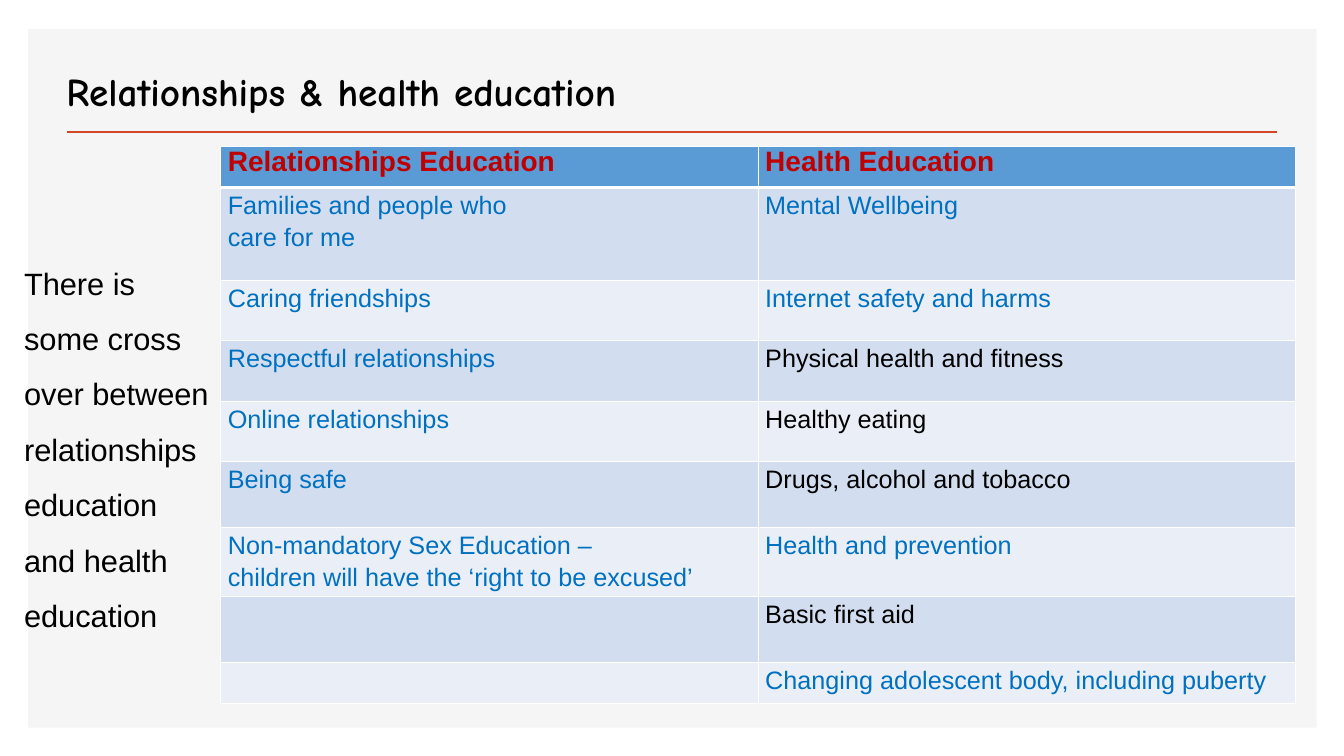
"""Build the slide on relationships and health education."""
from lxml import etree
from pptx import Presentation
from pptx import util as u
from pptx.dml.color import RGBColor
from pptx.enum import shapes, text
from pptx.oxml import ns

HUES = {
    "panel": "F5F5F5", "rule": "D24726", "black": "000000", "blue": "0070C0",
    "red": "C00000", "head": "5B9BD5", "dark": "D2DEEF", "light": "EAEFF7",
    "white": "FFFFFF",
}
ROWS = [
    (0.41, "Relationships Education", "Health Education", "red"),
    (0.92, "Families and people who\ncare for me", "Mental Wellbeing", "blue"),
    (0.6, "Caring friendships", "Internet safety and harms", "blue"),
    (0.6, "Respectful relationships", "Physical health and fitness", "black"),
    (0.6, "Online relationships", "Healthy eating", "black"),
    (0.65, "Being safe", "Drugs, alcohol and tobacco", "black"),
    (0.64, "Non-mandatory Sex Education –\nchildren will have the ‘right to be excused’",
     "Health and prevention", "blue"),
    (0.65, "", "Basic first aid", "black"),
    (0.41, "", "Changing adolescent body, including puberty", "blue"),
]


def style(para, size, hue, face="Arial", bold=False):
    para.font.size = u.Pt(size)
    para.font.name = face
    para.font.bold = bold
    para.font.color.rgb = RGBColor.from_string(HUES[hue])


def border(cell, below):
    props = cell._tc.get_or_add_tcPr()
    for spot, side in enumerate("LRTB"):
        width = below if side == "B" else 1
        line = etree.Element(ns.qn("a:ln" + side), w=str(u.Pt(width)))
        fill = etree.SubElement(line, ns.qn("a:solidFill"))
        etree.SubElement(fill, ns.qn("a:srgbClr"), val=HUES["white"])
        props.insert(spot, line)


deck = Presentation()
deck.slide_width, deck.slide_height = u.Inches(13.33), u.Inches(7.5)
slide = deck.slides.add_slide(deck.slide_layouts[6])

panel = slide.shapes.add_shape(
    shapes.MSO_SHAPE.RECTANGLE, u.Inches(0.28), u.Inches(0.29), u.Inches(12.78), u.Inches(6.93))
panel.shadow.inherit = False
panel.fill.solid()
panel.fill.fore_color.rgb = RGBColor.from_string(HUES["panel"])
panel.line.fill.background()

rule = slide.shapes.add_connector(
    shapes.MSO_CONNECTOR.STRAIGHT, u.Inches(0.66), u.Inches(1.31), u.Inches(12.67), u.Inches(1.31))
rule.line.color.rgb = RGBColor.from_string(HUES["rule"])
rule.line.width = u.Pt(2)
etree.SubElement(rule._element.spPr, ns.qn("a:effectLst"))

title = slide.shapes.add_textbox(
    u.Inches(0.56), u.Inches(-0.03), u.Inches(11.5), u.Inches(1.21)).text_frame
title.word_wrap = True
title.vertical_anchor = text.MSO_ANCHOR.BOTTOM
title.text = "Relationships & health education"
style(title.paragraphs[0], 28, "black", "Comic Neue", True)

note = slide.shapes.add_textbox(
    u.Inches(0.14), u.Inches(2.39), u.Inches(2.05), u.Inches(5.04)).text_frame
note.word_wrap = True
note.text = "There is some cross over between relationships education and health education"
para = note.paragraphs[0]
para.line_spacing = 1.5
para.space_before, para.space_after = u.Pt(10), u.Pt(12)
style(para, 22, "black")

high = sum(row[0] for row in ROWS)
table = slide.shapes.add_table(
    len(ROWS), 2, u.Inches(2.19), u.Inches(1.45), u.Inches(10.66), u.Inches(high)).table
for r, (tall, left, right, hue) in enumerate(ROWS):
    table.rows[r].height = u.Inches(tall)
    first = r == 0
    band = "head" if first else "dark" if r % 2 else "light"
    for c, words in enumerate((left, right)):
        cell = table.cell(r, c)
        cell.margin_left = cell.margin_right = u.Inches(0.07)
        cell.margin_top = cell.margin_bottom = 0
        cell.fill.solid()
        cell.fill.fore_color.rgb = RGBColor.from_string(HUES[band])
        border(cell, 3 if first else 1)
        cell.text = words
        for para in cell.text_frame.paragraphs:
            para.line_spacing = 1 if first else 1.15
            style(para, 20 if first else 18, hue if first or c else "blue", bold=first)

deck.save("out.pptx")
